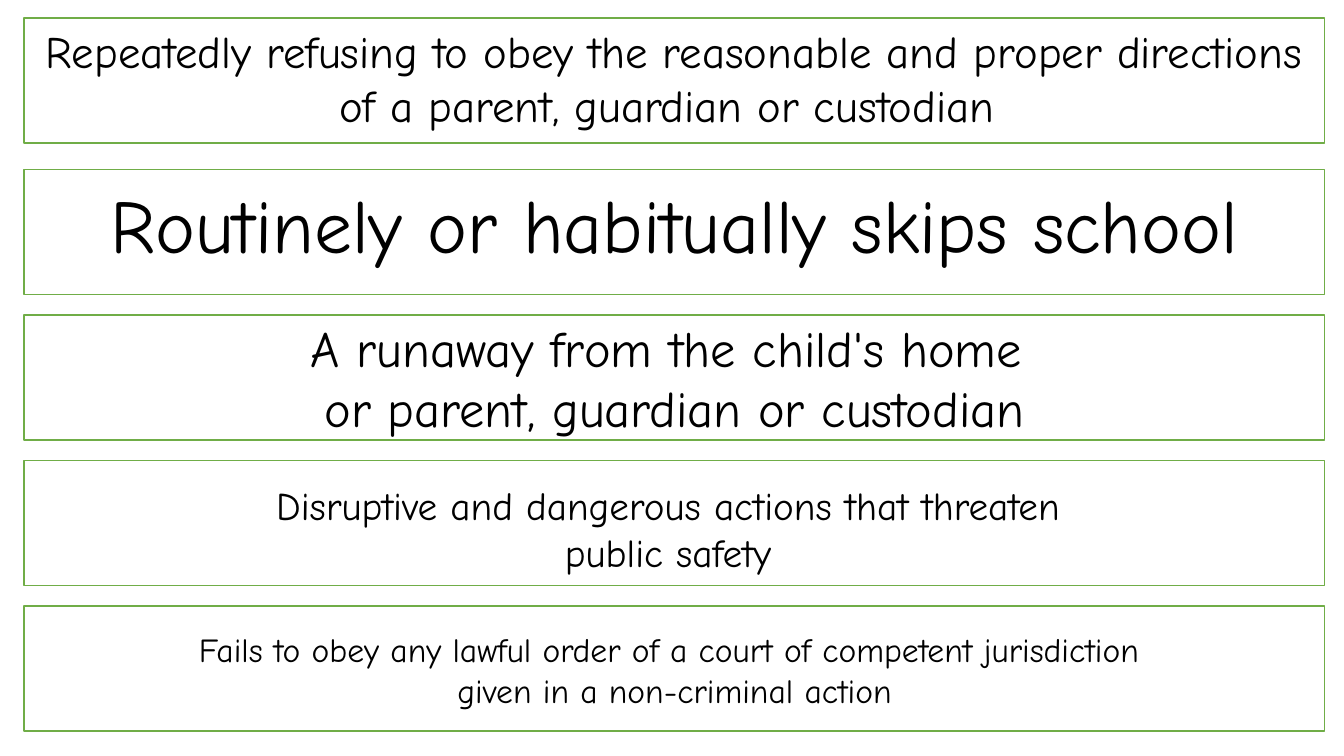
"""Build a slide of five outlined bands, each stating one kind of conduct."""
import pptx
import pptx.dml.color
import pptx.enum.shapes
import pptx.enum.text
import pptx.util

BLACK = pptx.dml.color.RGBColor(0x00, 0x00, 0x00)
WHITE = pptx.dml.color.RGBColor(0xFF, 0xFF, 0xFF)
GREEN = pptx.dml.color.RGBColor(0x70, 0xAD, 0x47)
FONT = "Comic Neue"
SLIDE_WIDTH, SLIDE_HEIGHT = 13.33, 7.5
BAND_LEFT, BAND_WIDTH, BAND_HEIGHT = 0.24, 12.9, 1.24
FIRST_TOP, SECOND_TOP, ROW_PITCH = 0.18, 1.68, 1.444

REFUSAL = ["Repeatedly refusing to obey the reasonable and proper directions "
           "of a parent, guardian or custodian "]
TRUANCY = ["Routinely or habitually skips school"]
RUNAWAY = ["A runaway from the child's home ", "or parent, guardian or custodian"]
DISRUPTION = ["Disruptive and dangerous actions that threaten ", "public safety "]
DISOBEDIENCE = ["Fails to obey any lawful order of a court of competent jurisdiction ",
                "given in a non-criminal action"]


def band_top(row):
    """Return the top of a band; the first sits slightly apart from the rest."""
    return SECOND_TOP + (row - 1) * ROW_PITCH if row else FIRST_TOP


def band_box(top, height):
    """Return the position and size of a full-width box."""
    return [pptx.util.Inches(value) for value in (BAND_LEFT, top, BAND_WIDTH, height)]


def write_lines(shape, lines, size):
    """Write centred lines of text, one paragraph each."""
    text_frame = shape.text_frame
    text_frame.word_wrap = True
    for index, line in enumerate(lines):
        paragraph = text_frame.add_paragraph() if index else text_frame.paragraphs[0]
        paragraph.alignment = pptx.enum.text.PP_ALIGN.CENTER
        run = paragraph.add_run()
        run.text = line
        run.font.name = FONT
        run.font.size = pptx.util.Pt(size)
        run.font.color.rgb = BLACK


def add_band(slide, row):
    """Add the outlined rectangle of a row."""
    shape = slide.shapes.add_shape(
        pptx.enum.shapes.MSO_SHAPE.RECTANGLE, *band_box(band_top(row), BAND_HEIGHT))
    shape.shadow.inherit = False
    shape.fill.solid()
    shape.fill.fore_color.rgb = WHITE
    shape.line.color.rgb = GREEN
    shape.line.width = pptx.util.Pt(1)
    return shape


def add_caption(slide, row, offset, height, lines, size):
    """Add a text box starting a little below the top of a row."""
    shape = slide.shapes.add_textbox(*band_box(band_top(row) + offset, height))
    write_lines(shape, lines, size)


def main():
    """Create and save the presentation."""
    presentation = pptx.Presentation()
    presentation.slide_width = pptx.util.Inches(SLIDE_WIDTH)
    presentation.slide_height = pptx.util.Inches(SLIDE_HEIGHT)
    slide = presentation.slides.add_slide(presentation.slide_layouts[6])

    bands = [add_band(slide, row) for row in range(5)]
    runaway_band = bands[2]
    runaway_band.text_frame.vertical_anchor = pptx.enum.text.MSO_ANCHOR.MIDDLE
    write_lines(runaway_band, RUNAWAY, 36)

    add_caption(slide, 0, 0.01, 1.18, REFUSAL, 32)
    add_caption(slide, 1, 0.04, 1.01, TRUANCY, 54)
    add_caption(slide, 3, 0.16, 1.04, DISRUPTION, 28)
    add_caption(slide, 4, 0.18, 1.31, DISOBEDIENCE, 24)
    presentation.save("out.pptx")


if __name__ == "__main__":
    main()
